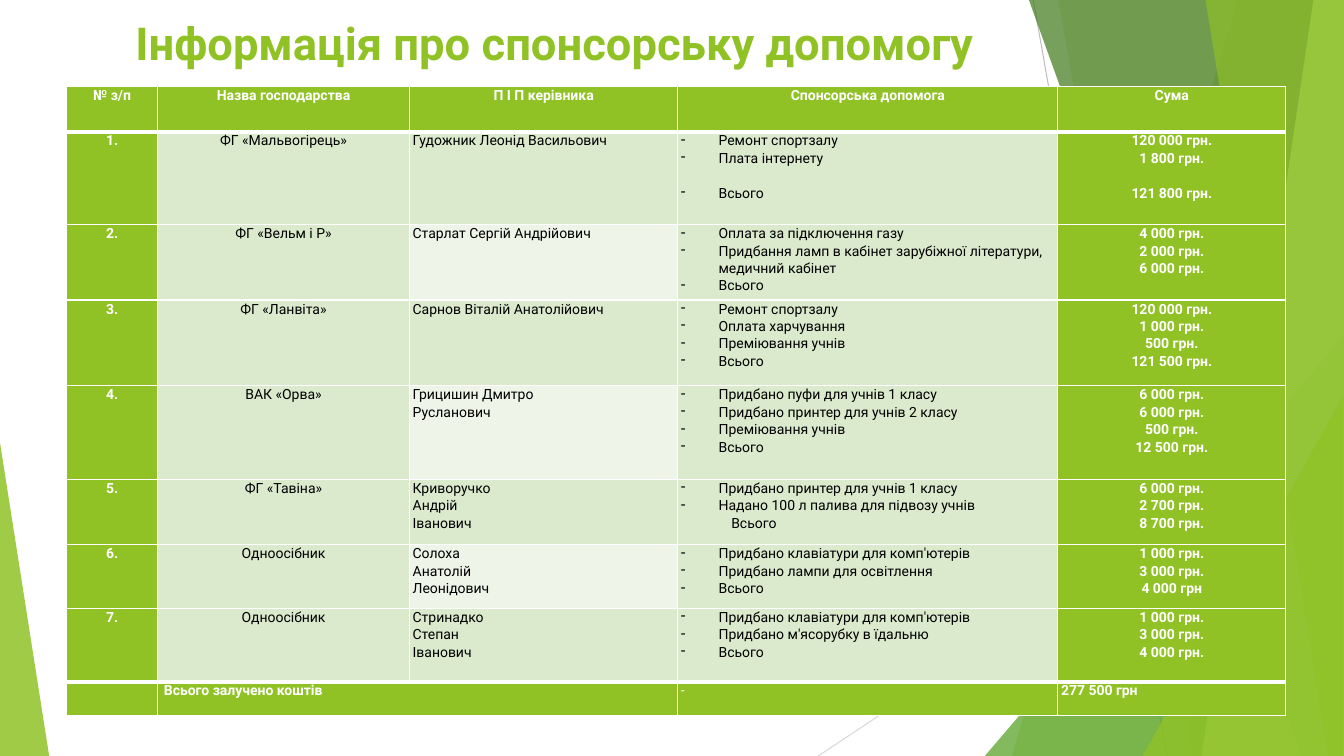
import pptx
import pptx.util
import pptx.dml.color
import pptx.enum.shapes
import pptx.enum.text
import pptx.oxml
import pptx.oxml.ns
import lxml.etree

Cm = pptx.util.Cm
Pt = pptx.util.Pt
RGBColor = pptx.dml.color.RGBColor
ALIGN = pptx.enum.text.PP_ALIGN
qn = pptx.oxml.ns.qn

GREEN = RGBColor(0x90, 0xC2, 0x26)
MIDDLE_GREEN = RGBColor(0x54, 0xA0, 0x21)
DARK_GREEN = RGBColor(0x3F, 0x78, 0x19)
LIME = RGBColor(0xC0, 0xE4, 0x74)
PALE = RGBColor(0xDB, 0xE9, 0xCD)
PALEST = RGBColor(0xEE, 0xF4, 0xE8)
WHITE = RGBColor(0xFF, 0xFF, 0xFF)
BLACK = RGBColor(0, 0, 0)
GREY = RGBColor(0xBF, 0xBF, 0xBF)
LIGHT_GREY = RGBColor(0xD9, 0xD9, 0xD9)

SLIDE_WIDTH, SLIDE_HEIGHT = 33.87, 19.05


def add_text(paragraph, text, size, color, bold):
    run = paragraph.add_run()
    run.text = text
    for name, value in {"name": "Roboto", "size": Pt(size), "bold": bold}.items():
        setattr(run.font, name, value)
    run.font.color.rgb = color


def add_border(cell, position, side, width):
    line = lxml.etree.Element(qn("a:ln" + side), w=str(Pt(width)))
    fill = lxml.etree.SubElement(line, qn("a:solidFill"))
    lxml.etree.SubElement(fill, qn("a:srgbClr"), val=str(WHITE))
    cell._tc.get_or_add_tcPr().insert(position, line)


presentation = pptx.Presentation()
presentation.slide_width = Cm(SLIDE_WIDTH)
presentation.slide_height = Cm(SLIDE_HEIGHT)
slide = presentation.slides.add_slide(presentation.slide_layouts[6])

thin_lines = [
    (26.04, 0, 29.41, SLIDE_HEIGHT, GREY),
    (SLIDE_WIDTH, 10.24, 20.62, SLIDE_HEIGHT, LIGHT_GREY),
]
for start_x, start_y, end_x, end_y, color in thin_lines:
    connector = slide.shapes.add_connector(
        pptx.enum.shapes.MSO_CONNECTOR.STRAIGHT,
        Cm(start_x), Cm(start_y), Cm(end_x), Cm(end_y))
    connector.line.color.rgb = color
    connector.line.width = Pt(0.75)
    lxml.etree.SubElement(connector._element.spPr, qn("a:effectLst"))

facets = [
    ("band", (31.19, 25.5), GREEN, 30),
    ("band", (26.67, 30.05), GREEN, 20),
    ("triangle", (24.82, 8.46, 9.04, 1), MIDDLE_GREEN, 72),
    ("band", (25.93, 32.79), DARK_GREEN, 70),
    ("band", (33.1, 30.28), LIME, 70),
    ("band", (30.38, 33.48), GREEN, 65),
    ("triangle", (28.8, 9.98, 5.05, 1), GREEN, 80),
    ("triangle", (0, 11.15, 1.24, 0), GREEN, 85),
]
for kind, geometry, color, opacity in facets:
    if kind == "band":
        top_x, bottom_x = geometry
        builder = slide.shapes.build_freeform(Cm(top_x), Cm(0))
        builder.add_line_segments([
            (Cm(SLIDE_WIDTH), Cm(0)),
            (Cm(SLIDE_WIDTH), Cm(SLIDE_HEIGHT)),
            (Cm(bottom_x), Cm(SLIDE_HEIGHT)),
        ], close=True)
        shape = builder.convert_to_shape()
    else:
        left, top, width, apex = geometry
        shape = slide.shapes.add_shape(
            pptx.enum.shapes.MSO_SHAPE.ISOSCELES_TRIANGLE,
            Cm(left), Cm(top), Cm(width), Cm(SLIDE_HEIGHT - top))
        shape.adjustments[0] = apex
    shape.shadow.inherit = False
    shape.line.fill.background()
    shape.fill.solid()
    shape.fill.fore_color.rgb = color
    color_element = shape._element.spPr.find(".//" + qn("a:srgbClr"))
    lxml.etree.SubElement(color_element, qn("a:alpha"), val=str(opacity * 1000))

title = slide.shapes.add_textbox(Cm(2.18), Cm(0.25), Cm(23.88), Cm(3.66))
title.text_frame.word_wrap = True
title_paragraph = title.text_frame.paragraphs[0]
title_paragraph.alignment = ALIGN.CENTER
add_text(title_paragraph, "Інформація про спонсорську допомогу ", 32.4, GREEN, True)

rows = [
    ("№ з/п", "Назва господарства", "П І П керівника", "Спонсорська допомога", "Сума"),
    ("1.", "ФГ «Мальвогірець»", "Гудожник Леонід Васильович",
     "Ремонт спортзалу\nПлата інтернету\n\nВсього",
     "120 000 грн.\n1 800 грн.\n\n121 800 грн."),
    ("2.", "ФГ «Вельм і Р»", "Старлат Сергій Андрійович",
     "Оплата за підключення газу\n"
     "Придбання ламп в кабінет зарубіжної літератури, медичний кабінет\nВсього",
     "4 000 грн.\n2 000 грн.\n6 000 грн."),
    ("3.", "ФГ «Ланвіта»", "Сарнов Віталій Анатолійович",
     "Ремонт спортзалу\nОплата харчування\nПреміювання учнів\nВсього",
     "120 000 грн.\n1 000 грн.\n500 грн.\n121 500 грн."),
    ("4.", "ВАК «Орва»", "Грицишин Дмитро\nРусланович",
     "Придбано пуфи для учнів 1 класу\nПридбано принтер для учнів 2 класу\n"
     "Преміювання учнів\nВсього",
     "6 000 грн.\n6 000 грн.\n500 грн.\n12 500 грн."),
    ("5.", "ФГ «Тавіна»", "Криворучко\nАндрій\nІванович",
     "Придбано принтер для учнів 1 класу\nНадано 100 л палива для підвозу учнів\nВсього",
     "6 000 грн.\n2 700 грн.\n8 700 грн."),
    ("6.", "Одноосібник", "Солоха\nАнатолій\nЛеонідович",
     "Придбано клавіатури для комп'ютерів\nПридбано лампи для освітлення\nВсього",
     "1 000 грн.\n3 000 грн.\n4 000 грн"),
    ("7.", "Одноосібник", "Стринадко\nСтепан\nІванович",
     "Придбано клавіатури для комп'ютерів\nПридбано м'ясорубку в їдальню\nВсього",
     "1 000 грн.\n3 000 грн.\n4 000 грн."),
    ("", "Всього залучено коштів", "", "-", "277 500 грн"),
]
column_widths = [2.29, 6.35, 6.76, 9.58, 5.74]
row_heights = [1.14, 2.34, 1.9, 2.16, 2.36, 1.65, 1.6, 1.85, 0.86]
last_row = len(rows) - 1
unbulleted_total_row = 5
cell_margins = {"margin_left": Cm(0.08), "margin_right": Cm(0.08),
                "margin_top": Cm(0), "margin_bottom": Cm(0)}

table = slide.shapes.add_table(
    len(rows), len(column_widths), Cm(1.68), Cm(2.18),
    Cm(sum(column_widths)), Cm(sum(row_heights))).table
for column, width in zip(table.columns, column_widths):
    column.width = Cm(width)
for row, height in zip(table.rows, row_heights):
    row.height = Cm(height)
table.cell(last_row, 1).merge(table.cell(last_row, 2))

for row_index, row_texts in enumerate(rows):
    is_body = 0 < row_index < last_row
    for column_index, cell_text in enumerate(row_texts):
        cell = table.cell(row_index, column_index)
        for name, value in cell_margins.items():
            setattr(cell, name, value)
        is_pale = is_body and column_index in (1, 2, 3)
        is_lightest = is_pale and column_index == 2 and row_index % 2 == 0
        cell.fill.solid()
        cell.fill.fore_color.rgb = PALEST if is_lightest else PALE if is_pale else GREEN
        top_width = 3 if row_index in (1, last_row) else 1
        bottom_width = 3 if row_index in (0, last_row - 1) else 1
        sides = {"L": 1, "R": 1, "T": top_width, "B": bottom_width}
        for position, (side, width) in enumerate(sides.items()):
            add_border(cell, position, side, width)
        if not cell_text:
            continue

        is_centered = row_index == 0 or is_body and column_index in (0, 1, 4)
        is_bold = not is_pale and cell_text != "-"
        paragraph = cell.text_frame.paragraphs[0]
        gap = 0
        for line_index, line_text in enumerate(cell_text.split("\n")):
            if not line_text:
                gap = 12.5
                continue
            if line_index:
                paragraph = cell.text_frame.add_paragraph()
            paragraph_format = {
                "alignment": ALIGN.CENTER if is_centered else ALIGN.LEFT,
                "line_spacing": 1.07, "space_before": Pt(gap)}
            for name, value in paragraph_format.items():
                setattr(paragraph, name, value)
            gap = 0
            if is_body and column_index == 3:
                properties = paragraph._p.get_or_add_pPr()
                if row_index == unbulleted_total_row and line_text == "Всього":
                    properties.set("marL", str(Cm(1.27)))
                else:
                    properties.set("marL", str(Cm(0.95)))
                    properties.set("indent", str(Cm(-0.95)))
                    lxml.etree.SubElement(properties, qn("a:buChar"), char="-")
            add_text(paragraph, line_text, 10, BLACK if is_pale else WHITE, is_bold)

table.cell(last_row, 1).margin_left = Cm(0.16)

presentation.save("out.pptx")
